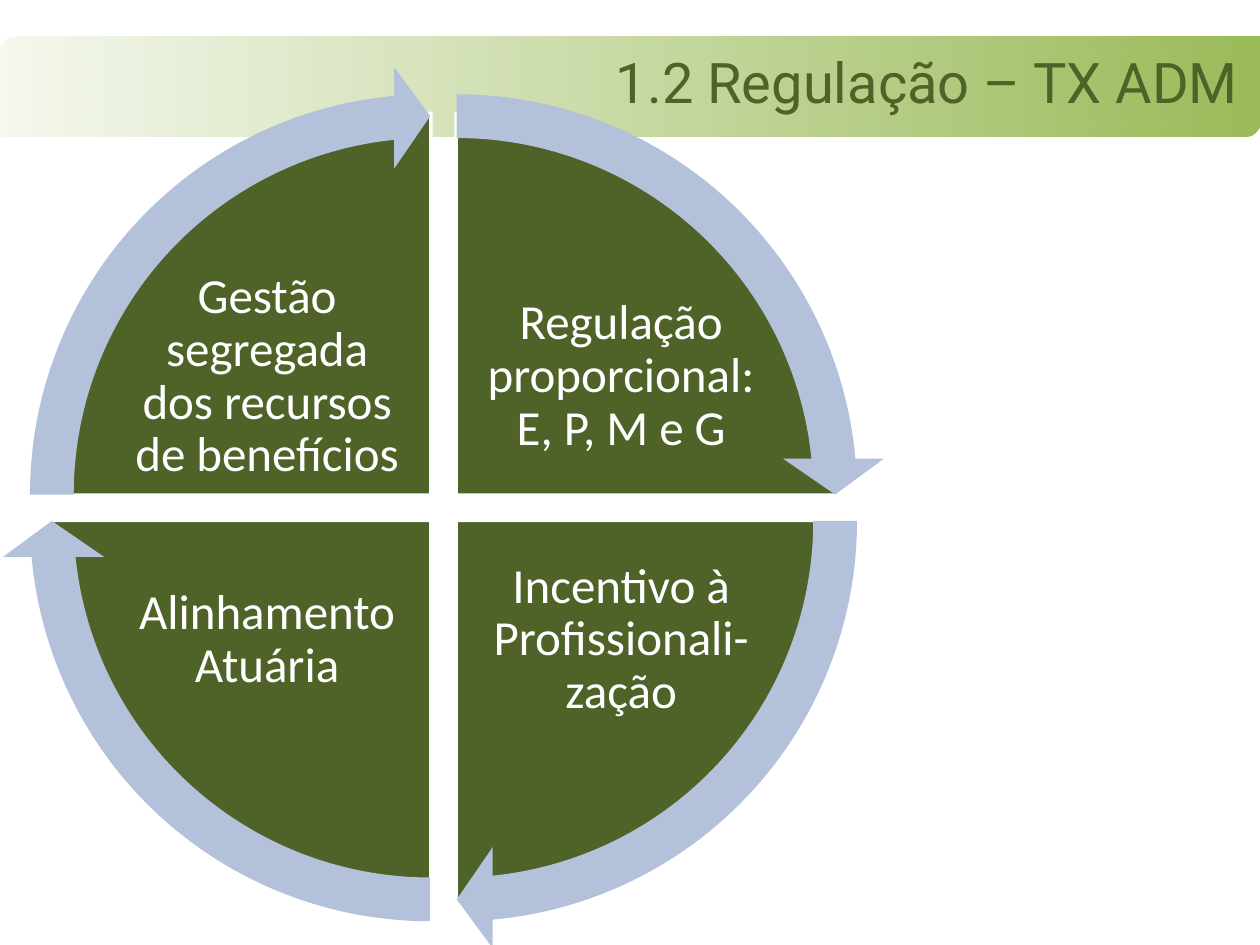
"""Build the administration fee regulation slide with its four-part cycle."""
from dataclasses import dataclass

from lxml import etree
from pptx import Presentation
from pptx import util as u
from pptx.dml.color import RGBColor
from pptx.enum import shapes, text
from pptx.oxml import ns

GREEN = RGBColor(0x9B, 0xBB, 0x59)
DARK_GREEN = RGBColor(0x4F, 0x62, 0x28)
PALE_BLUE = RGBColor(0xB3, 0xC1, 0xDB)
WHITE = RGBColor(0xFF, 0xFF, 0xFF)

PIE_SIZE = 6.06
ARROW_SIZE = 6.81
QUARTER = 54
FULL_TURN = 4 * QUARTER
ARROW_SWEEP = 50.725


@dataclass
class Quadrant:
    """One quarter of the cycle, with its start angle and side."""
    label: str
    start: int
    right: bool
    lower: bool


QUADRANTS = [
    Quadrant("Regulação proporcional: E, P, M e G", 162, True, False),
    Quadrant("Incentivo à Profissionali-zação", 0, True, True),
    Quadrant("Alinhamento Atuária", 54, False, True),
    Quadrant("Gestão segregada dos recursos de benefícios", 108, False, False),
]


def add_preset(s, kind, left: float, top: float, width: float, height: float, adjustments=()):
    """Add a preset shape without shadow or outline."""
    sp = s.shapes.add_shape(kind, *map(u.Inches, (left, top, width, height)))
    sp.shadow.inherit = False
    sp.line.fill.background()
    for i, value in enumerate(adjustments):
        sp.adjustments[i] = value
    return sp


def write_text(sp, content: str, size: int, font: str, color: RGBColor, align, insets) -> None:
    """Fill a shape with one formatted, vertically centred paragraph."""
    tf = sp.text_frame
    tf.word_wrap = True
    tf.auto_size = text.MSO_AUTO_SIZE.NONE
    tf.vertical_anchor = text.MSO_ANCHOR.MIDDLE
    tf.margin_left, tf.margin_top, tf.margin_right, tf.margin_bottom = map(u.Inches, insets)
    p = tf.paragraphs[0]
    p.text = content
    p.alignment = align
    p.line_spacing = 0.9
    p.font.size = u.Pt(size)
    p.font.name = font
    p.font.color.rgb = color


def add_title(s) -> None:
    """Draw the gradient band and set the title over it."""
    band = add_preset(s, shapes.MSO_SHAPE.ROUND_2_DIAG_RECTANGLE, 0, 0.29, 10, 0.79)
    band.fill.gradient()
    band.fill.gradient_angle = 0
    for stop, position in zip(band.fill.gradient_stops, (0, 1)):
        stop.color.rgb = GREEN
        stop.position = position
    first = next(band.element.iter(ns.qn("a:srgbClr")))
    etree.SubElement(first, ns.qn("a:alpha"), val="10000")
    title = s.shapes.title
    title.left, title.top, title.width, title.height = map(u.Inches, (0.04, 0.32, 9.92, 0.71))
    write_text(title, "1.2 Regulação – TX ADM", 32, "Roboto", DARK_GREEN,
               text.PP_ALIGN.RIGHT, (3, 0.13, 0.13, 0.13))
    title.element.addprevious(band.element)


def add_quadrant(s, q: Quadrant) -> None:
    """Draw one pie quarter and its label."""
    end = (q.start + QUARTER) % FULL_TURN
    pie = add_preset(s, shapes.MSO_SHAPE.PIE, 0.59 if q.right else 0.39,
                     1.1 if q.lower else 0.9, PIE_SIZE, PIE_SIZE, (q.start, end))
    pie.fill.solid()
    pie.fill.fore_color.rgb = DARK_GREEN
    pie.line.color.rgb = WHITE
    pie.line.width = u.Pt(2)
    box = s.shapes.add_textbox(u.Inches(3.81 if q.right else 1),
                               u.Inches(4.25 if q.lower else 2.16),
                               u.Inches(2.24), u.Inches(1.66))
    write_text(box, q.label, 28, "Calibri", WHITE, text.PP_ALIGN.CENTER, (0.04,) * 4)


def add_cycle_arrow(s, q: Quadrant) -> None:
    """Draw the circular arrow around one quarter."""
    arrow = add_preset(s, shapes.MSO_SHAPE.CIRCULAR_ARROW, 0.22 if q.right else 0.01,
                       0.73 if q.lower else 0.52, ARROW_SIZE, ARROW_SIZE,
                       (0.051, 3.275, q.start + ARROW_SWEEP, q.start, 0.059))
    arrow.fill.solid()
    arrow.fill.fore_color.rgb = PALE_BLUE


def main() -> None:
    """Build and save the slide."""
    prs = Presentation()
    prs.slide_width, prs.slide_height = u.Inches(10), u.Inches(7.5)
    s = prs.slides.add_slide(prs.slide_layouts[5])
    add_title(s)
    for q in QUADRANTS:
        add_quadrant(s, q)
    for q in QUADRANTS:
        add_cycle_arrow(s, q)
    prs.save("out.pptx")


if __name__ == "__main__":
    main()
